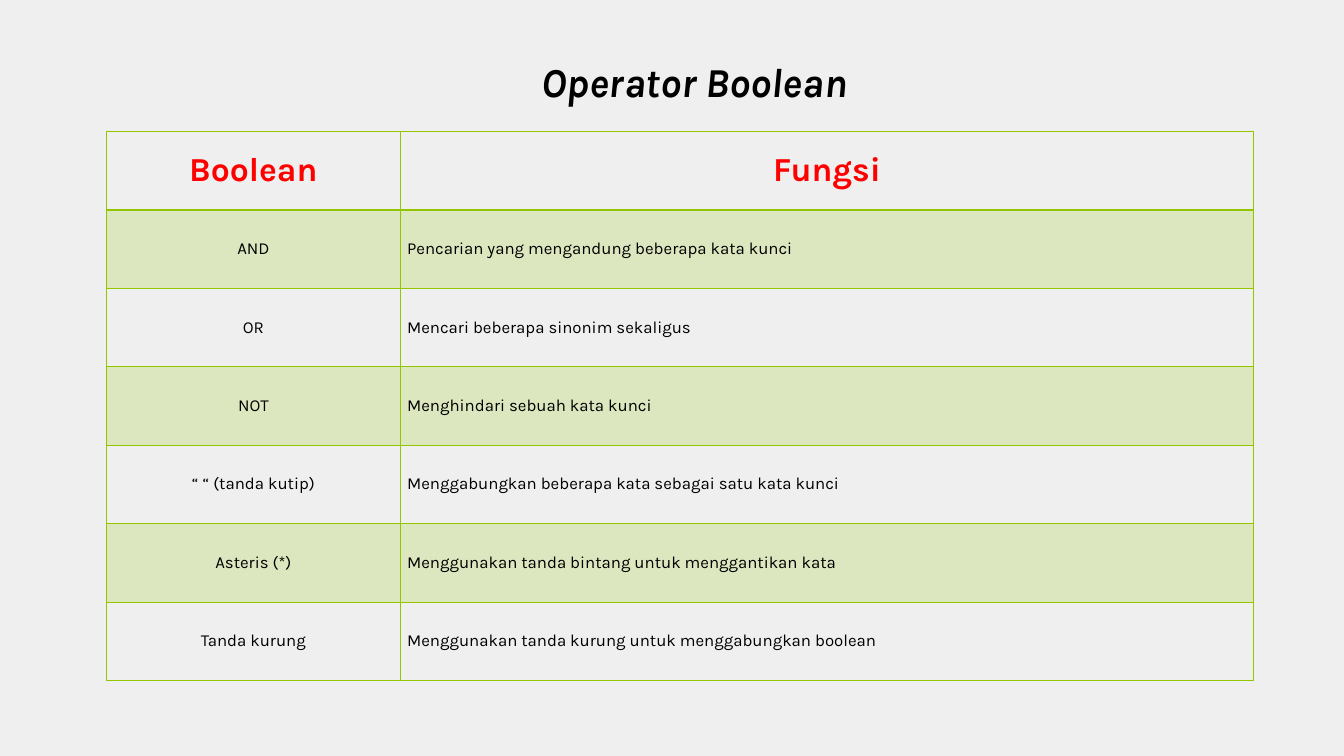
from dataclasses import dataclass

from lxml import etree
from pptx import Presentation
from pptx import util as u
from pptx.dml import color
from pptx.enum import text
from pptx.oxml import ns

PX = 9525  # EMU per px: the slide is 1920 x 1080 px
FONT = "Karla"
COLOURS = {"page": "EFEFEF", "green": "94C600", "heading": "FF0000", "ink": "000000"}
BAND_OPACITY = 20  # percent

TABLE_LEFT, TABLE_TOP = 152, 188
COLUMN_WIDTHS = (420, 1219)
ROW_HEIGHT = 112


@dataclass(frozen=True)
class Operator:
    name: str
    purpose: str


HEADING = Operator("Boolean", "Fungsi")
OPERATORS = [
    Operator("AND", "Pencarian yang mengandung beberapa kata kunci"),
    Operator("OR", "Mencari beberapa sinonim sekaligus"),
    Operator("NOT", "Menghindari sebuah kata kunci"),
    Operator("“ “ (tanda kutip)", "Menggabungkan beberapa kata sebagai satu kata kunci"),
    Operator("Asteris (*)", "Menggunakan tanda bintang untuk menggantikan kata"),
    Operator("Tanda kurung", "Menggunakan tanda kurung untuk menggabungkan boolean"),
]

TITLE_FORMAT = {"size": u.Pt(44), "bold": True, "italic": True}
HEADING_FORMAT = {"size": u.Pt(36), "bold": True}
BODY_FORMAT = {"size": u.Pt(18), "bold": False}


def rgb(name: str) -> color.RGBColor:
    return color.RGBColor.from_string(COLOURS[name])


def write(frame, words: str, ink: str, centred: bool, font_format: dict) -> None:
    """Put one formatted paragraph into a text frame."""
    paragraph = frame.paragraphs[0]
    paragraph.alignment = text.PP_ALIGN.CENTER if centred else text.PP_ALIGN.LEFT
    run = paragraph.add_run()
    run.text = words
    for key, value in {"name": FONT, **font_format}.items():
        setattr(run.font, key, value)
    run.font.color.rgb = rgb(ink)


def fill_cell(cell, banded: bool) -> None:
    """Tint a banded cell and leave any other one clear."""
    if not banded:
        cell.fill.background()
        return
    cell.fill.solid()
    cell.fill.fore_color.rgb = rgb("green")
    tint = cell._tc.tcPr.find(f".//{ns.qn('a:srgbClr')}")
    etree.SubElement(tint, ns.qn("a:alpha"), val=str(BAND_OPACITY * 1000))


def border_cell(cell, top: int, bottom: int) -> None:
    """Draw the four cell borders, with widths in points."""
    widths = {"lnL": 1, "lnR": 1, "lnT": top, "lnB": bottom}
    for position, (side, width) in enumerate(widths.items()):
        line = etree.Element(ns.qn(f"a:{side}"), w=str(u.Pt(width)))
        paint = etree.SubElement(line, ns.qn("a:solidFill"))
        etree.SubElement(paint, ns.qn("a:srgbClr"), val=COLOURS["green"])
        cell._tc.get_or_add_tcPr().insert(position, line)


def add_title(slide, words: str) -> None:
    title = slide.shapes.title
    bounds = {"left": 496, "top": 76, "width": 992, "height": 81}
    for key, value in bounds.items():
        setattr(title, key, value * PX)
    frame = title.text_frame
    frame.word_wrap = True
    frame.auto_size = text.MSO_AUTO_SIZE.SHAPE_TO_FIT_TEXT
    frame.vertical_anchor = text.MSO_ANCHOR.TOP
    write(frame, words, "ink", True, TITLE_FORMAT)


def add_operator_table(slide, rows: list[Operator]) -> None:
    table = slide.shapes.add_table(
        len(rows), len(COLUMN_WIDTHS), TABLE_LEFT * PX, TABLE_TOP * PX,
        sum(COLUMN_WIDTHS) * PX, len(rows) * ROW_HEIGHT * PX,
    ).table
    table.horz_banding = False
    for column, width in zip(table.columns, COLUMN_WIDTHS):
        column.width = width * PX

    for r, operator in enumerate(rows):
        is_heading = r == 0
        ink, font_format = ("heading", HEADING_FORMAT) if is_heading else ("ink", BODY_FORMAT)
        for c, words in enumerate((operator.name, operator.purpose)):
            cell = table.cell(r, c)
            cell.vertical_anchor = text.MSO_ANCHOR.MIDDLE
            write(cell.text_frame, words, ink, is_heading or c == 0, font_format)
            fill_cell(cell, banded=r % 2 == 1)
            # The rule under the heading row is heavier
            border_cell(cell, top=2 if r == 1 else 1, bottom=2 if is_heading else 1)


def main() -> None:
    deck = Presentation()
    deck.slide_width, deck.slide_height = 1920 * PX, 1080 * PX
    slide = deck.slides.add_slide(deck.slide_layouts[5])

    # Page colour
    page = slide.background.fill
    page.solid()
    page.fore_color.rgb = rgb("page")

    # Title and table
    add_title(slide, "Operator Boolean")
    add_operator_table(slide, [HEADING, *OPERATORS])
    deck.save("out.pptx")


if __name__ == "__main__":
    main()
